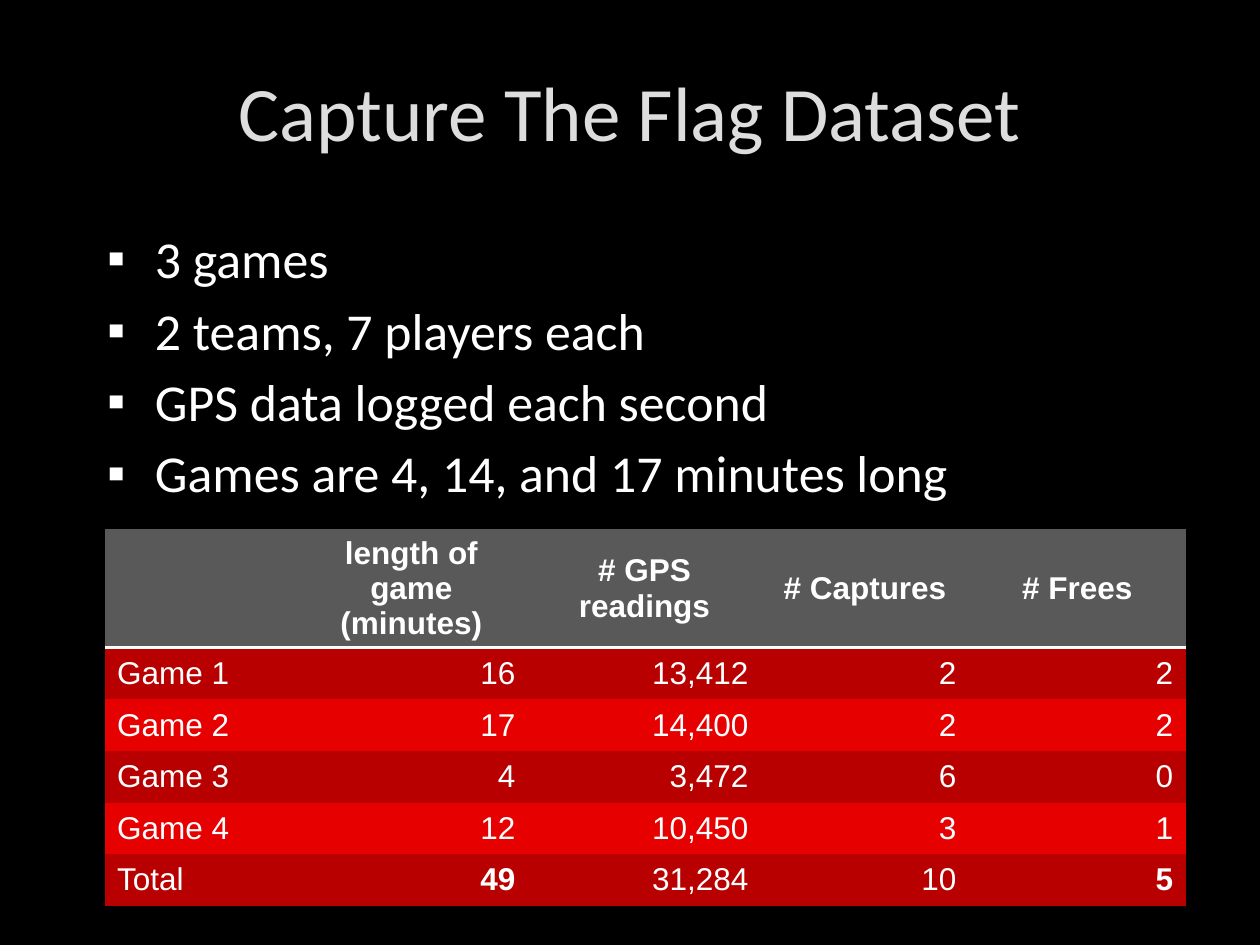
from lxml import etree
from pptx import Presentation
from pptx.dml.color import RGBColor
from pptx.enum.text import MSO_ANCHOR, MSO_AUTO_SIZE, PP_ALIGN
from pptx.oxml.ns import qn
from pptx.util import Inches, Pt

LEFT, CENTER, RIGHT = PP_ALIGN.LEFT, PP_ALIGN.CENTER, PP_ALIGN.RIGHT
MIDDLE = MSO_ANCHOR.MIDDLE
NO_FIT = MSO_AUTO_SIZE.NONE

BLACK = RGBColor(0x00, 0x00, 0x00)
WHITE = RGBColor(0xFF, 0xFF, 0xFF)
LIGHT_GRAY = RGBColor(0xDD, 0xDD, 0xDD)
HEADER_GRAY = RGBColor(0x59, 0x59, 0x59)
DARK_RED = RGBColor(0xB9, 0x00, 0x00)
RED = RGBColor(0xE7, 0x00, 0x00)

PLAIN_TABLE = "{2D5ABB26-0587-4C30-8999-92F81FD0307C}"
BULLETS = [
    "3 games",
    "2 teams, 7 players each",
    "GPS data logged each second",
    "Games are 4, 14, and 17 minutes long",
]
GAME_ROWS = [
    ["", "length of game (minutes)", "# GPS readings", "# Captures", "# Frees"],
    ["Game 1", "16", "13,412", "2", "2"],
    ["Game 2", "17", "14,400", "2", "2"],
    ["Game 3", "4", "3,472", "6", "0"],
    ["Game 4", "12", "10,450", "3", "1"],
    ["Total", "49", "31,284", "10", "5"],
]
BOLD_TOTALS = ("49", "5")
COL_WIDTHS = [1.51, 1.85, 1.85, 1.65, 1.72]
HEADER_HEIGHT, ROW_HEIGHT = 0.93, 0.41


class SlideBuilder:
    """Holds the text style and the current slide."""

    heading_font = "Calibri"
    table_font = "Arial"

    def __init__(self, prs):
        self.s = prs.slides.add_slide(prs.slide_layouts[1])
        fill = self.s.background.fill
        fill.solid()
        fill.fore_color.rgb = BLACK

    def format_runs(self, p, font, size, color, bold=False):
        for r in p.runs:
            r.font.name = font
            r.font.size = Pt(size)
            r.font.color.rgb = color
            r.font.bold = bold

    def place(self, sp, left, top, width, height):
        sp.left, sp.top = Inches(left), Inches(top)
        sp.width, sp.height = Inches(width), Inches(height)
        sp.text_frame.auto_size = NO_FIT

    def title(self, text, *box):
        sp = self.s.shapes.title
        self.place(sp, *box)
        tf = sp.text_frame
        tf.text = text
        tf.vertical_anchor = MIDDLE
        p = tf.paragraphs[0]
        p.alignment = CENTER
        self.format_runs(p, self.heading_font, 44, LIGHT_GRAY)

    def bullets(self, items, *box):
        sp = self.s.placeholders[1]
        self.place(sp, *box)
        tf = sp.text_frame
        tf.text = "\n".join(items)
        for p in tf.paragraphs:
            p.space_before = Pt(5.3)
            self.format_runs(p, self.heading_font, 29.6, WHITE)
            pPr = p._p.get_or_add_pPr()
            pPr.set("marL", str(Inches(0.38)))
            pPr.set("indent", str(-Inches(0.38)))
            etree.SubElement(pPr, qn("a:buFont")).set("typeface", "Arial")
            etree.SubElement(pPr, qn("a:buChar")).set("char", "▪")

    def bottom_border(self, cell, color, width):
        ln = etree.Element(qn("a:lnB"), w=str(Pt(width)))
        fill = etree.SubElement(ln, qn("a:solidFill"))
        etree.SubElement(fill, qn("a:srgbClr")).set("val", str(color))
        cell._tc.get_or_add_tcPr().insert(0, ln)

    def cell(self, cell, text, fill, align, bold):
        cell.text = text
        cell.vertical_anchor = MIDDLE
        cell.fill.solid()
        cell.fill.fore_color.rgb = fill
        p = cell.text_frame.paragraphs[0]
        p.alignment = align
        self.format_runs(p, self.table_font, 18, WHITE, bold)

    def table(self, rows, widths, left, top):
        height = HEADER_HEIGHT + ROW_HEIGHT * (len(rows) - 1)
        table = self.s.shapes.add_table(
            len(rows), len(widths), Inches(left), Inches(top),
            Inches(sum(widths)), Inches(height)).table
        table._tbl.tblPr.find(qn("a:tableStyleId")).text = PLAIN_TABLE
        for col, width in zip(table.columns, widths):
            col.width = Inches(width)
        for i, values in enumerate(rows):
            header = i == 0
            table.rows[i].height = Inches(HEADER_HEIGHT if header else ROW_HEIGHT)
            fill = HEADER_GRAY if header else DARK_RED if i % 2 else RED
            for j, text in enumerate(values):
                align = CENTER if header else RIGHT if j else LEFT
                total = i == len(rows) - 1 and text in BOLD_TOTALS
                cell = table.cell(i, j)
                self.cell(cell, text, fill, align, header or total)
                if header:
                    self.bottom_border(cell, WHITE, 2)


def main():
    prs = Presentation()
    prs.slide_width, prs.slide_height = Inches(10), Inches(7.5)
    slide = SlideBuilder(prs)
    slide.title("Capture The Flag Dataset", 0.75, 0.25, 8.5, 1.25)
    slide.bullets(BULLETS, 0.75, 1.75, 8.5, 2.25)
    slide.table(GAME_ROWS, COL_WIDTHS, 0.83, 4.2)
    prs.save("out.pptx")


if __name__ == "__main__":
    main()
